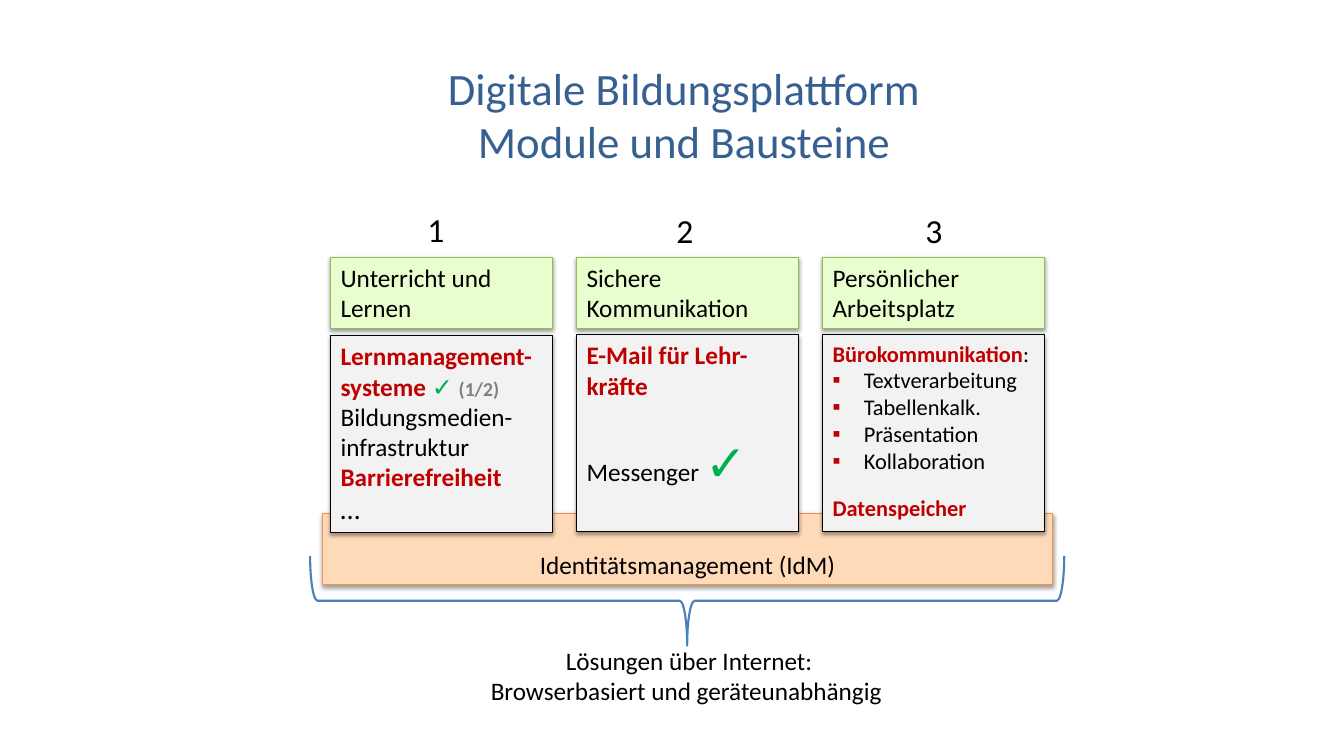
from dataclasses import dataclass

from lxml.etree import SubElement
from pptx import Presentation
from pptx.dml.color import RGBColor
from pptx.enum.shapes import MSO_SHAPE
from pptx.enum.text import MSO_ANCHOR, MSO_AUTO_SIZE, PP_ALIGN
from pptx.oxml.ns import qn
from pptx.util import Inches, Pt

BLACK, RED, GREEN, GREY, BLUE = "000000", "C00000", "00B050", "808080", "376092"


@dataclass
class Run:
    text: str
    size: float = 18
    color: str = BLACK
    bold: bool = False


@dataclass
class Para:
    runs: list[Run]
    before: float = 0
    bullet: bool = False


@dataclass
class Module:
    number: str
    title: str
    body: list[Para]
    number_top: float = 2.03
    body_top: float = 3.32


def rgb(color: str) -> RGBColor:
    return RGBColor.from_string(color)


def add_bullet(p) -> None:
    pPr = p._p.get_or_add_pPr()
    pPr.set("marL", str(Inches(0.31)))
    pPr.set("indent", str(-Inches(0.31)))
    SubElement(SubElement(pPr, qn("a:buClr")), qn("a:srgbClr"), val=RED)
    SubElement(pPr, qn("a:buFont"), typeface="Calibri")
    SubElement(pPr, qn("a:buChar"), char="▪")


def write(tf, paras: list[Para], align=PP_ALIGN.LEFT) -> None:
    for i, para in enumerate(paras):
        p = tf.paragraphs[0] if i == 0 else tf.add_paragraph()
        p.alignment = align
        p.space_before = Pt(para.before)
        if para.bullet:
            add_bullet(p)
        for run in para.runs:
            r = p.add_run()
            r.text = run.text
            r.font.name = "Calibri"
            r.font.size = Pt(run.size)
            r.font.bold = run.bold
            r.font.color.rgb = rgb(run.color)


def add_shadow(s) -> None:
    effects = s._element.spPr.find(qn("a:effectLst"))
    shadow = SubElement(effects, qn("a:outerShdw"), blurRad=str(Pt(3.1)),
                        dist=str(Pt(1.6)), dir="5400000", rotWithShape="0")
    color = SubElement(shadow, qn("a:srgbClr"), val=BLACK)
    SubElement(color, qn("a:alpha"), val="38000")


def add_box(slide, x: float, y: float, w: float, h: float, fill: str, line: str):
    s = slide.shapes.add_shape(MSO_SHAPE.RECTANGLE, Inches(x), Inches(y), Inches(w), Inches(h))
    s.shadow.inherit = False
    add_shadow(s)
    s.fill.solid()
    s.fill.fore_color.rgb = rgb(fill)
    s.line.color.rgb = rgb(line)
    s.line.width = Pt(0.75)
    tf = s.text_frame
    tf.word_wrap = True
    tf.vertical_anchor = MSO_ANCHOR.TOP
    return tf


def add_label(slide, x: float, y: float, w: float, h: float,
              lines: list[Run], align=PP_ALIGN.CENTER) -> None:
    tf = slide.shapes.add_textbox(Inches(x), Inches(y), Inches(w), Inches(h)).text_frame
    tf.word_wrap = False
    tf.auto_size = MSO_AUTO_SIZE.SHAPE_TO_FIT_TEXT
    write(tf, [Para([line]) for line in lines], align)


OFFICE_TOOLS = ["Textverarbeitung", "Tabellenkalk.", "Präsentation", "Kollaboration"]

MODULES = [
    Module("1", "Unterricht und Lernen", [
        Para([Run("Lernmanagement-systeme ", 18, RED, True), Run("✓ ", 18, GREEN, True),
              Run("(1/2)", 14, GREY, True)]),
        Para([Run("Bildungsmedien-infrastruktur")]),
        Para([Run("Barrierefreiheit", 18, RED, True)]),
        Para([Run("…", 20)]),
    ], number_top=2.02, body_top=3.33),
    Module("2", "Sichere Kommunikation", [
        Para([Run("E-Mail für Lehr-kräfte", 18, RED, True)]),
        Para([Run("Messenger "), Run("✓", 36, GREEN, True)], before=22),
    ]),
    Module("3", "Persönlicher Arbeitsplatz", [
        Para([Run("Bürokommunikation", 16, RED, True), Run(":", 16)]),
        *[Para([Run(tool, 16)], bullet=True) for tool in OFFICE_TOOLS],
        Para([Run("Datenspeicher", 16, RED, True)], before=14.6),
    ]),
]


def main() -> None:
    prs = Presentation()
    prs.slide_width, prs.slide_height = Inches(13.33), Inches(7.5)
    slide = prs.slides.add_slide(prs.slide_layouts[6])

    # Identity management base; the modules overlap its upper part
    tf = add_box(slide, 3.2, 5.09, 7.24, 0.71, "FFDAB9", "F69240")
    tf.vertical_anchor = MSO_ANCHOR.MIDDLE
    tf.margin_top = Inches(0.36)
    write(tf, [Para([Run("Identitätsmanagement (IdM)")])], PP_ALIGN.CENTER)

    # Title and caption
    add_label(slide, 4.21, 0.55, 5.15, 1.18,
              [Run("Digitale Bildungsplattform", 32, BLUE), Run("Module und Bausteine", 32, BLUE)])
    add_label(slide, 4.7, 6.35, 4.27, 0.71,
              [Run("Lösungen über Internet:"), Run("Browserbasiert und geräteunabhängig ")])

    # Brace below the platform
    s = slide.shapes.add_shape(MSO_SHAPE.RIGHT_BRACE, Inches(6.37), Inches(2.22),
                               Inches(0.89), Inches(7.48))
    s.rotation = 90
    s.shadow.inherit = False
    s.fill.background()
    s.line.color.rgb = rgb("4B7EBC")
    s.line.width = Pt(1.5)

    # Modules: body, number and heading
    for i, module in enumerate(MODULES):
        x = 3.28 + 2.44 * i
        write(add_box(slide, x, module.body_top, 2.2, 1.95, "F2F2F2", BLACK), module.body)
        add_label(slide, 4.14 + 2.47 * i, module.number_top, 0.37, 0.5,
                  [Run(module.number, 24)], PP_ALIGN.LEFT)
        write(add_box(slide, x, 2.55, 2.2, 0.71, "E8FECE", "98B955"), [Para([Run(module.title)])])

    prs.save("out.pptx")


if __name__ == "__main__":
    main()
